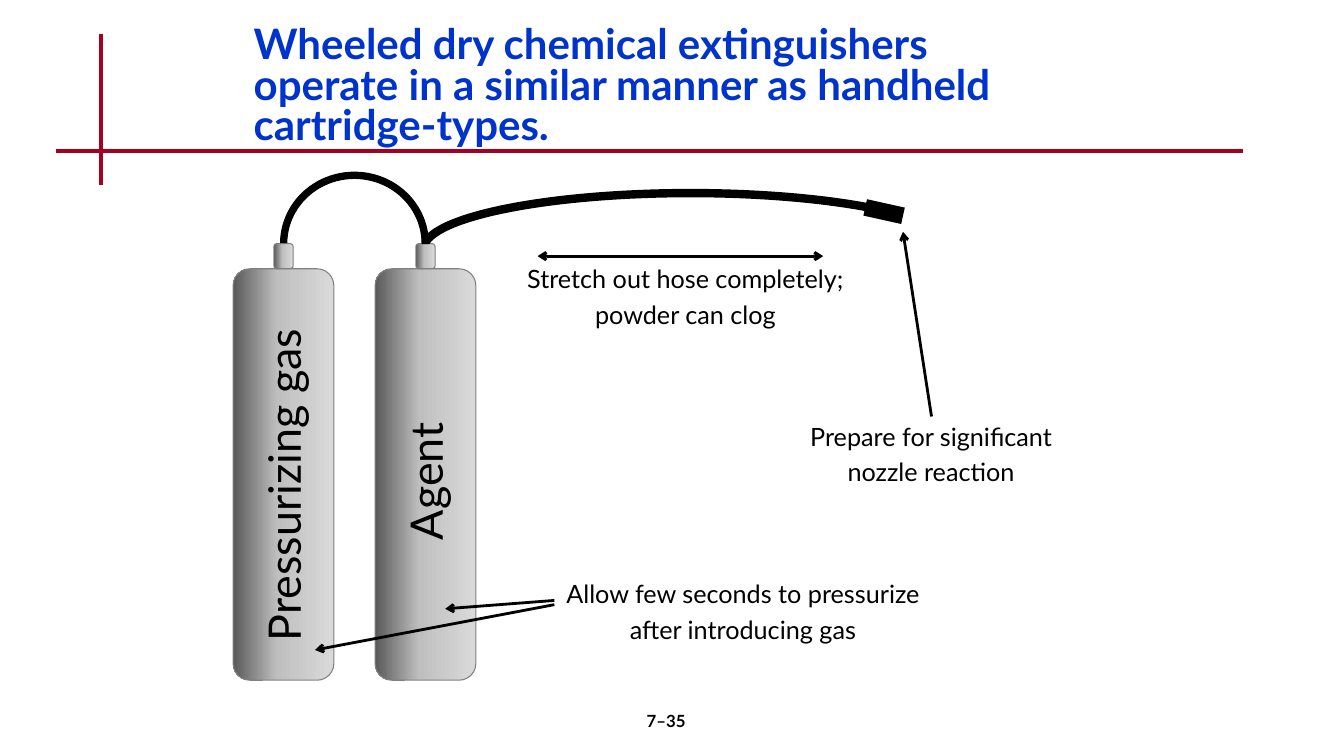
import pptx
import pptx.util
import pptx.dml.color
import pptx.enum.shapes
import pptx.enum.text
import pptx.oxml
import pptx.oxml.ns

SHAPES = pptx.enum.shapes.MSO_SHAPE
ALIGN = pptx.enum.text.PP_ALIGN
qn = pptx.oxml.ns.qn

deck = pptx.Presentation()
deck.slide_width = pptx.util.Inches(13.33)
deck.slide_height = pptx.util.Inches(7.5)
cell = deck.slide_width / 160
slide = deck.slides.add_slide(deck.slide_layouts[5])


def grid(*cells):
    return [round(n * cell) for n in cells]


def paint(color_format, hex_color):
    color_format.rgb = pptx.dml.color.RGBColor.from_string(hex_color)


strokes = [
    ((12, 4, 12, 22), "A50021", 3, ()),
    ((6.7, 18, 148, 18), "A50021", 3, ()),
    ((103, 24.7, 107.5, 25.7), "000000", 12, ()),
    ((64, 30.5, 98, 30.5), "000000", 2, ("a:headEnd", "a:tailEnd")),
    ((66, 71.5, 53, 72.5), "000000", 2, ("a:tailEnd",)),
    ((66, 72, 37.5, 77.4), "000000", 2, ("a:tailEnd",)),
    ((110.9, 49.6, 107.5, 27.6), "000000", 2, ("a:tailEnd",)),
]

tanks = [("Pressurizing gas", 27.75, 42), ("Agent", 44.65, 17.9)]
labels = []
for name, left, length in tanks:
    for box in ((left, 32, 12, 49), (left + 4.85, 29, 2.3, 3)):
        metal = slide.shapes.add_shape(SHAPES.FLOWCHART_ALTERNATE_PROCESS, *grid(*box))
        metal.shadow.inherit = False
        metal.fill.gradient()
        metal.fill.gradient_angle = 180
        stops = metal._element.spPr.find(".//" + qn("a:gsLst"))
        for stop in list(stops):
            stops.remove(stop)
        for position, shade in ((1, "D9D9D9"), (56, "BFBFBF"), (100, "595959")):
            stop = pptx.oxml.ns.qn("a:gs")
            stop = stops.makeelement(stop, {"pos": str(position * 1000)})
            stop.append(stop.makeelement(qn("a:srgbClr"), {"val": shade}))
            stops.append(stop)
        paint(metal.line.color, "808080")
        metal.line.width = pptx.util.Pt(0.75)
    labels.append(((left + 6 - length / 2, 52.7, length, 7.7), [name], 32, False, ALIGN.LEFT, -90, True))

link = slide.shapes.add_shape(SHAPES.BLOCK_ARC, *grid(33.4, 20.5, 17.6, 17))
hose = slide.shapes.add_shape(SHAPES.ARC, *grid(50.4, 23, 63.6, 13.4))
hose._element.spPr.xfrm.set("flipH", "1")
link.fill.solid()
paint(link.fill.fore_color, "000000")
hose.fill.background()
for tube, angles, width in (
    (link, (108.394, 0, 0.044), 0.75),
    (hose, (115.751, 215.023), 6),
):
    for index, angle in enumerate(angles):
        tube.adjustments[index] = angle
    tube.shadow.inherit = False
    paint(tube.line.color, "000000")
    tube.line.width = pptx.util.Pt(width)

for ends, color, width, heads in strokes:
    stroke = slide.shapes.add_connector(pptx.enum.shapes.MSO_CONNECTOR.STRAIGHT, *grid(*ends))
    paint(stroke.line.color, color)
    stroke.line.width = pptx.util.Pt(width)
    outline = stroke.line._get_or_add_ln()
    for head in heads:
        outline.append(outline.makeelement(qn(head), {"type": "arrow"}))
    properties = stroke._element.spPr
    properties.append(properties.makeelement(qn("a:effectLst"), {}))

labels += [
    ((61.2, 30.8, 40.8, 9.2), ["Stretch out hose completely;", "powder can clog"], 18, False, ALIGN.CENTER, 0, False),
    ((66, 68.3, 44.9, 9.2), ["Allow few seconds to pressurize", "after introducing gas"], 18, False, ALIGN.CENTER, 0, False),
    ((95, 49.6, 31.7, 9.2), ["Prepare for significant", "nozzle reaction"], 18, False, ALIGN.CENTER, 0, False),
    ((62.6, 84, 33.4, 6), ["7–35"], 12, True, ALIGN.CENTER, 0, True),
]
for box, lines, size, bold, align, turn, wrap in labels:
    label = slide.shapes.add_textbox(*grid(*box))
    label.rotation = turn
    label.text_frame.word_wrap = wrap
    for index, line in enumerate(lines):
        paragraph = label.text_frame.paragraphs[0] if index == 0 else label.text_frame.add_paragraph()
        paragraph.alignment = align
        if index:
            paragraph.space_before = pptx.util.Pt(size * 0.2)
        run = paragraph.add_run()
        run.text = line
        run.font.name = "Lato"
        run.font.size = pptx.util.Pt(size)
        run.font.bold = bold
        paint(run.font.color, "000000")

title = slide.shapes.title
title.left, title.top, title.width, title.height = grid(29, 3, 94, 15)
title.text_frame.auto_size = pptx.enum.text.MSO_AUTO_SIZE.NONE
title.text_frame.word_wrap = True
title.text_frame.vertical_anchor = pptx.enum.text.MSO_ANCHOR.MIDDLE
heading = title.text_frame.paragraphs[0]
heading.alignment = ALIGN.LEFT
heading.line_spacing = 0.8
run = heading.add_run()
run.text = "Wheeled dry chemical extinguishers operate in a similar manner as handheld cartridge-types."
run.font.name = "Lato"
run.font.size = pptx.util.Pt(30)
run.font.bold = True
paint(run.font.color, "0033CC")
slide.shapes._spTree.append(title._element)

deck.save("out.pptx")
